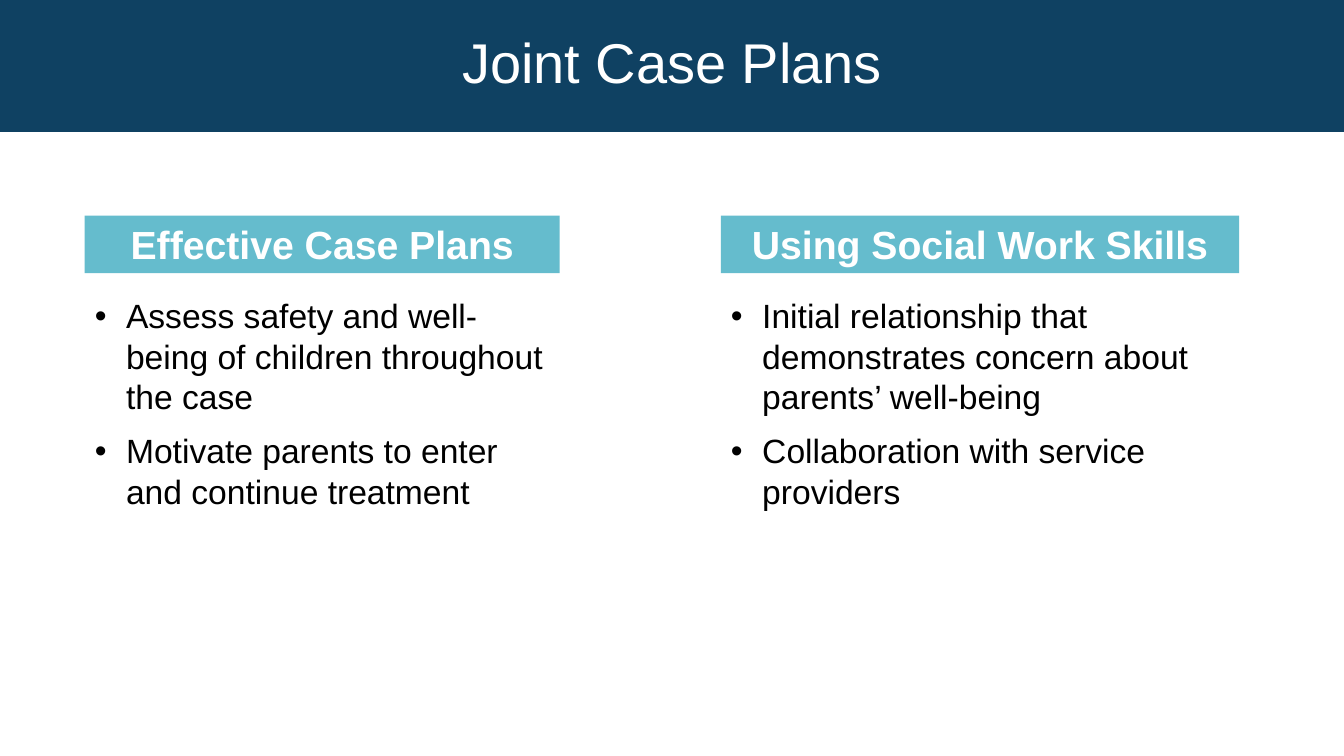
from pptx import Presentation
from pptx.dml.color import RGBColor
from pptx.enum.text import MSO_ANCHOR, MSO_AUTO_SIZE, PP_ALIGN
from pptx.oxml import parse_xml
from pptx.oxml.ns import nsdecls
from pptx.util import Inches, Pt

NAVY = RGBColor(0x0F, 0x41, 0x62)
TEAL = RGBColor(0x65, 0xBC, 0xCD)
WHITE = RGBColor(0xFF, 0xFF, 0xFF)
BLACK = RGBColor(0x00, 0x00, 0x00)

HEAD_TOP, HEAD_H = 2.14, 0.57
LIST_TOP, LIST_H = 2.88, 2.81
INDENT = Inches(0.31)

# Left edge, width, heading and bullets of each column
COLUMNS = [
    (0.84, 4.71, "Effective Case Plans", [
        "Assess safety and well-being of children throughout the case",
        "Motivate parents to enter and continue treatment",
    ]),
    (7.15, 5.14, "Using Social Work Skills", [
        "Initial relationship that demonstrates concern about parents’ well-being",
        "Collaboration with service providers",
    ]),
]


def place(sp, left, top, width, height, anchor, fill=None):
    sp.left, sp.top = Inches(left), Inches(top)
    sp.width, sp.height = Inches(width), Inches(height)
    tf = sp.text_frame
    tf.word_wrap = True
    tf.auto_size = MSO_AUTO_SIZE.NONE
    tf.vertical_anchor = anchor
    if fill is not None:
        sp.fill.solid()
        sp.fill.fore_color.rgb = fill
    return tf


def write(p, text, size, color, align, bold=False):
    p.alignment = align
    p.space_before = Pt(0)
    r = p.add_run()
    r.text = text
    r.font.name = "Arial"
    r.font.size = Pt(size)
    r.font.bold = bold
    r.font.color.rgb = color


prs = Presentation()
prs.slide_width, prs.slide_height = Inches(13.33), Inches(7.5)
slide = prs.slides.add_slide(prs.slide_layouts.get_by_name("Comparison"))
title, *bodies = slide.placeholders

# Title band
tf = place(title, 0, 0, 13.33, 1.3, MSO_ANCHOR.MIDDLE, NAVY)
title.line.color.rgb = NAVY
title.line.width = Pt(1)
tf.paragraphs[0].line_spacing = 0.9
write(tf.paragraphs[0], "Joint Case Plans", 40, WHITE, PP_ALIGN.CENTER)

# Columns: a heading bar above a bulleted list
for (left, width, heading, items), head, body in zip(COLUMNS, bodies[::2], bodies[1::2]):
    tf = place(head, left, HEAD_TOP, width, HEAD_H, MSO_ANCHOR.TOP, TEAL)
    write(tf.paragraphs[0], heading, 28, WHITE, PP_ALIGN.CENTER, bold=True)

    tf = place(body, left, LIST_TOP, width, LIST_H, MSO_ANCHOR.TOP)
    for i, item in enumerate(items):
        p = tf.paragraphs[0] if i == 0 else tf.add_paragraph()
        pPr = p._p.get_or_add_pPr()
        pPr.set("marL", str(INDENT))
        pPr.set("indent", str(-INDENT))
        pPr.append(parse_xml(f'<a:buChar {nsdecls("a")} char="•"/>'))
        p.space_after = Pt(10)
        write(p, item, 24, BLACK, PP_ALIGN.LEFT)

prs.save("out.pptx")
